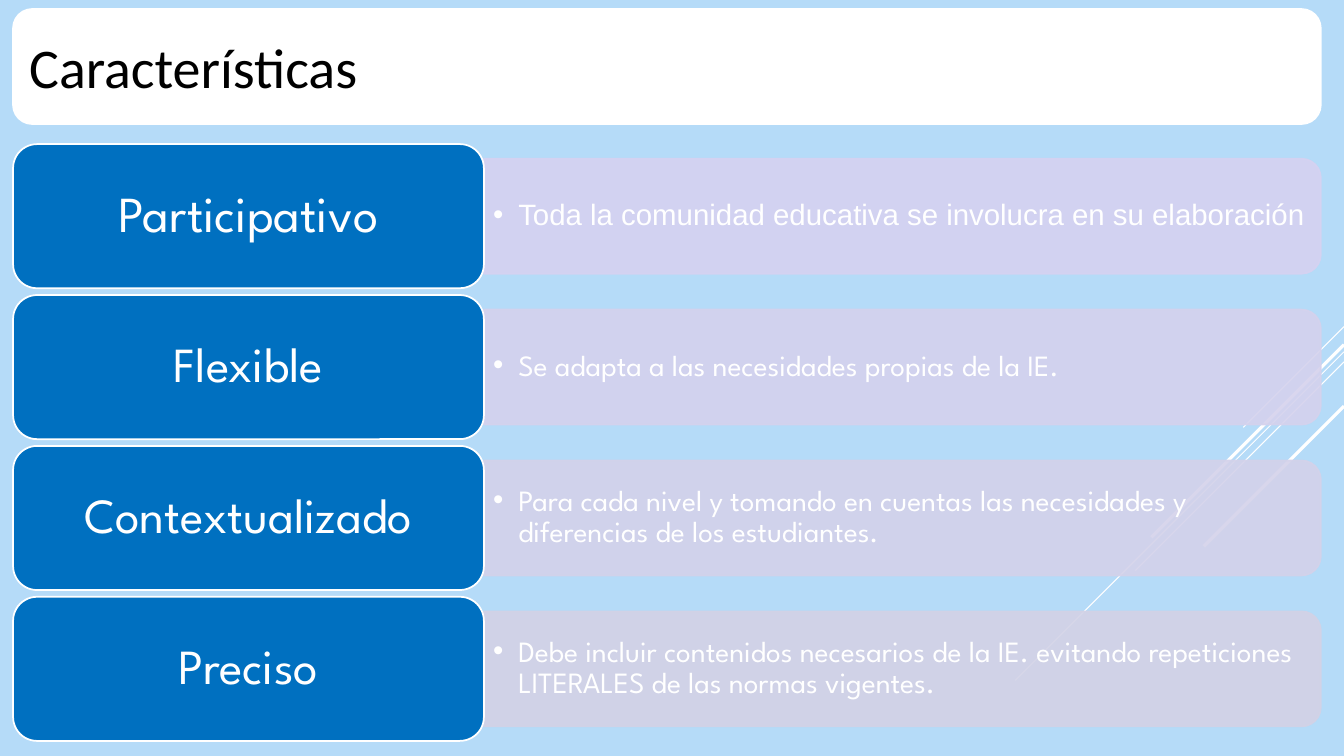
import pptx
import pptx.util
import pptx.dml.color
import pptx.enum.shapes
import pptx.enum.text
import pptx.oxml.ns
from lxml import etree

Inch = pptx.util.Inches
Pt = pptx.util.Pt
Shape = pptx.enum.shapes.MSO_SHAPE
Align = pptx.enum.text.PP_ALIGN
qn = pptx.oxml.ns.qn

WIDE, HIGH = 13.33, 7.5
LEFT, TOP, PITCH = 0.13, 1.43, 1.497
LABEL_W, ROW_H = 4.67, 1.43
PANEL_X, PANEL_W, BAR_H = LEFT + LABEL_W, 8.3, 1.14
COLORS = {"sky": "B5DBF8", "white": "FFFFFF", "black": "000000", "blue": "0070C0"}
FONT = "League Spartan"

# label, label size, detail, detail font, panel colour
ROWS = [
    ("Participativo", 36, "Toda la comunidad educativa se involucra en su elaboración",
     "Arial", "D6D2F1"),
    ("Flexible", 35, "Se adapta a las necesidades propias de la IE.", FONT, "D5D2ED"),
    ("Contextualizado", 35, "Para cada nivel y tomando en cuentas las necesidades y "
     "diferencias de los estudiantes.", FONT, "D4D2EA"),
    ("Preciso", 35, "Debe incluir contenidos necesarios de la IE. evitando repeticiones "
     "LITERALES de las normas vigentes.", FONT, "D3D2E6"),
]

# start height on the right edge, run to the lower left, width
RAYS = [(3.24, 1, 0.75), (3.49, 3.26, 0.75), (3.59, 2.07, 0.75),
        (3.42, 1.91, 2.25), (4.03, 1.39, 2.25)]


def rgb(code):
    return pptx.dml.color.RGBColor.from_string(code)


def add_box(slide, kind, x, y, w, h, fill, line):
    box = slide.shapes.add_shape(kind, Inch(x), Inch(y), Inch(w), Inch(h))
    box.shadow.inherit = False
    box.fill.solid()
    box.fill.fore_color.rgb = rgb(fill)
    box.line.color.rgb = rgb(line)
    box.line.width = Pt(1.25)
    return box


def set_text(shape, text, size, font, color, align, pads):
    """Fill a shape with one paragraph; pads are the side and top insets."""
    frame = shape.text_frame
    frame.text = text
    frame.word_wrap = True
    frame.auto_size = pptx.enum.text.MSO_AUTO_SIZE.NONE
    frame.vertical_anchor = pptx.enum.text.MSO_ANCHOR.MIDDLE
    frame.margin_left = frame.margin_right = Inch(pads[0])
    frame.margin_top = frame.margin_bottom = Inch(pads[1])
    para = frame.paragraphs[0]
    para.alignment = align
    para.line_spacing = 0.9
    style = para.runs[0].font
    style.size, style.name = Pt(size), font
    style.color.rgb = rgb(color)
    return para


def add_bullet(para):
    props = para._p.get_or_add_pPr()
    props.set("marL", str(Inch(0.25)))
    props.set("indent", str(-Inch(0.25)))
    etree.SubElement(props, qn("a:buFont")).set("typeface", "Arial")
    etree.SubElement(props, qn("a:buChar")).set("char", "•")


def fade(shape, share):
    """Set the opacity of the fill and the line, in percent."""
    for color in shape._element.spPr.iter(qn("a:srgbClr")):
        etree.SubElement(color, qn("a:alpha")).set("val", str(share * 1000))


def add_ray(slide, y, run, width):
    ray = slide.shapes.add_connector(
        pptx.enum.shapes.MSO_CONNECTOR.STRAIGHT,
        Inch(WIDE), Inch(y), Inch(WIDE - run), Inch(y + run))
    ray.line.color.rgb = rgb(COLORS["white"])
    ray.line.width = Pt(width)
    etree.SubElement(ray._element.spPr, qn("a:effectLst"))


def add_panel(slide, mid, text, font, color):
    """Add a bar, rounded on its right end, centred on the height mid."""
    bar = add_box(slide, Shape.ROUND_2_SAME_RECTANGLE,
                  PANEL_X + (PANEL_W - BAR_H) / 2, mid - PANEL_W / 2,
                  BAR_H, PANEL_W, color, color)
    bar.rotation = 90
    fade(bar, 90)
    note = slide.shapes.add_textbox(
        Inch(PANEL_X), Inch(mid - 0.52), Inch(8.25), Inch(1.03))
    add_bullet(set_text(note, text, 21, font, COLORS["white"], Align.LEFT, (0.09, 0.04)))


def add_label(slide, mid, text, size):
    label = add_box(slide, Shape.ROUNDED_RECTANGLE, LEFT, mid - ROW_H / 2,
                    LABEL_W, ROW_H, COLORS["blue"], COLORS["white"])
    set_text(label, text, size, FONT, COLORS["white"], Align.CENTER, (0.15, 0.07))


def add_title(slide, text):
    place = (LEFT, 0.09, PANEL_X + PANEL_W - LEFT, BAR_H)
    add_box(slide, Shape.ROUNDED_RECTANGLE, *place, COLORS["white"], COLORS["white"])
    title = slide.shapes.title
    title.left, title.top, title.width, title.height = map(Inch, place)
    para = set_text(title, text, 40, "Calibri", COLORS["black"], Align.LEFT, (0.16, 0.05))
    para.line_spacing = 1.0
    slide.shapes.element.append(title._element)  # bring in front of its banner


def main():
    deck = pptx.Presentation()
    deck.slide_width, deck.slide_height = Inch(WIDE), Inch(HIGH)
    slide = deck.slides.add_slide(deck.slide_layouts[5])
    back = slide.background.fill
    back.solid()
    back.fore_color.rgb = rgb(COLORS["sky"])
    for ray in RAYS:
        add_ray(slide, *ray)
    for row, (name, size, detail, font, color) in enumerate(ROWS):
        mid = TOP + row * PITCH + ROW_H / 2
        add_panel(slide, mid, detail, font, color)
        add_label(slide, mid, name, size)
    add_title(slide, "Características")
    deck.save("out.pptx")


if __name__ == "__main__":
    main()
